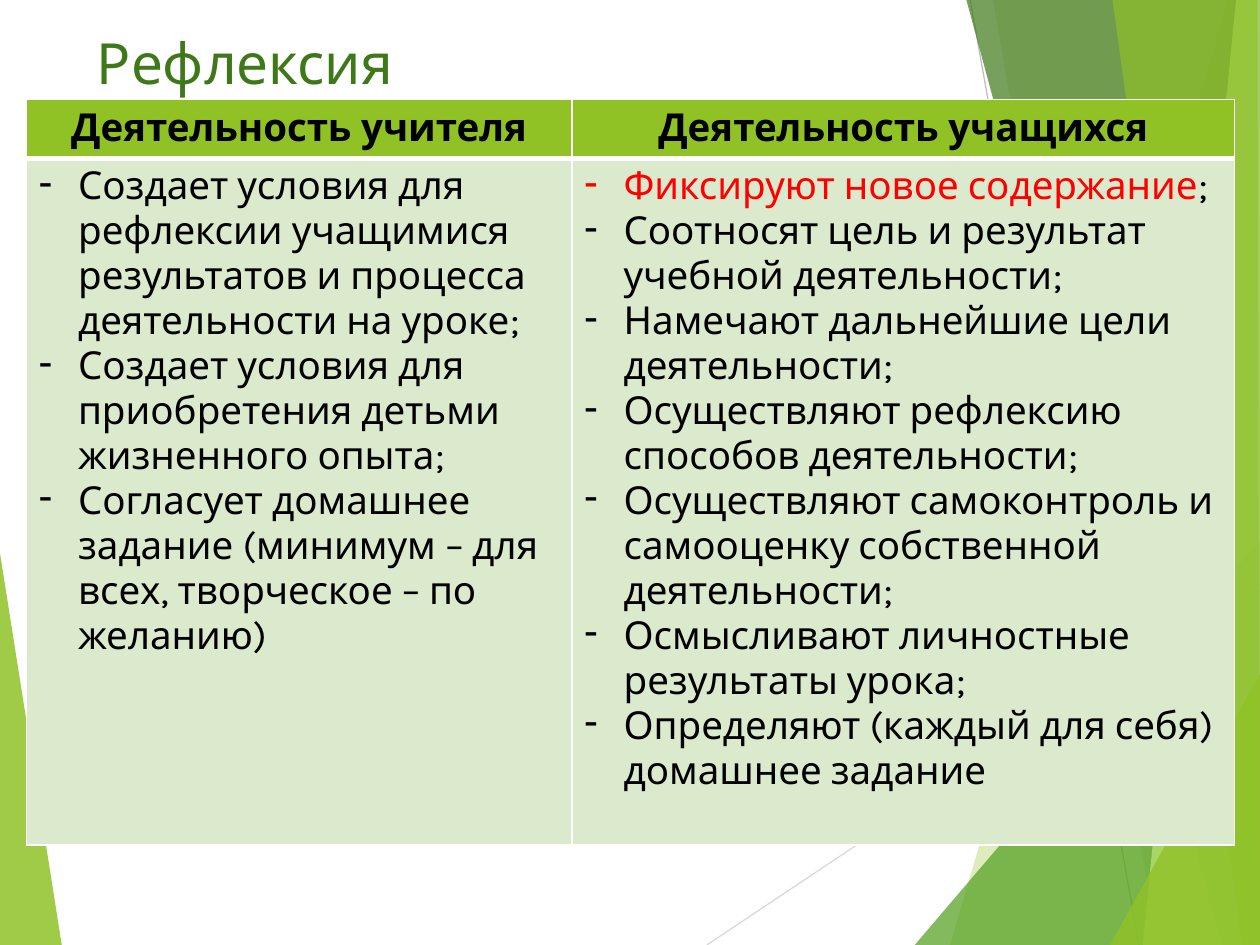
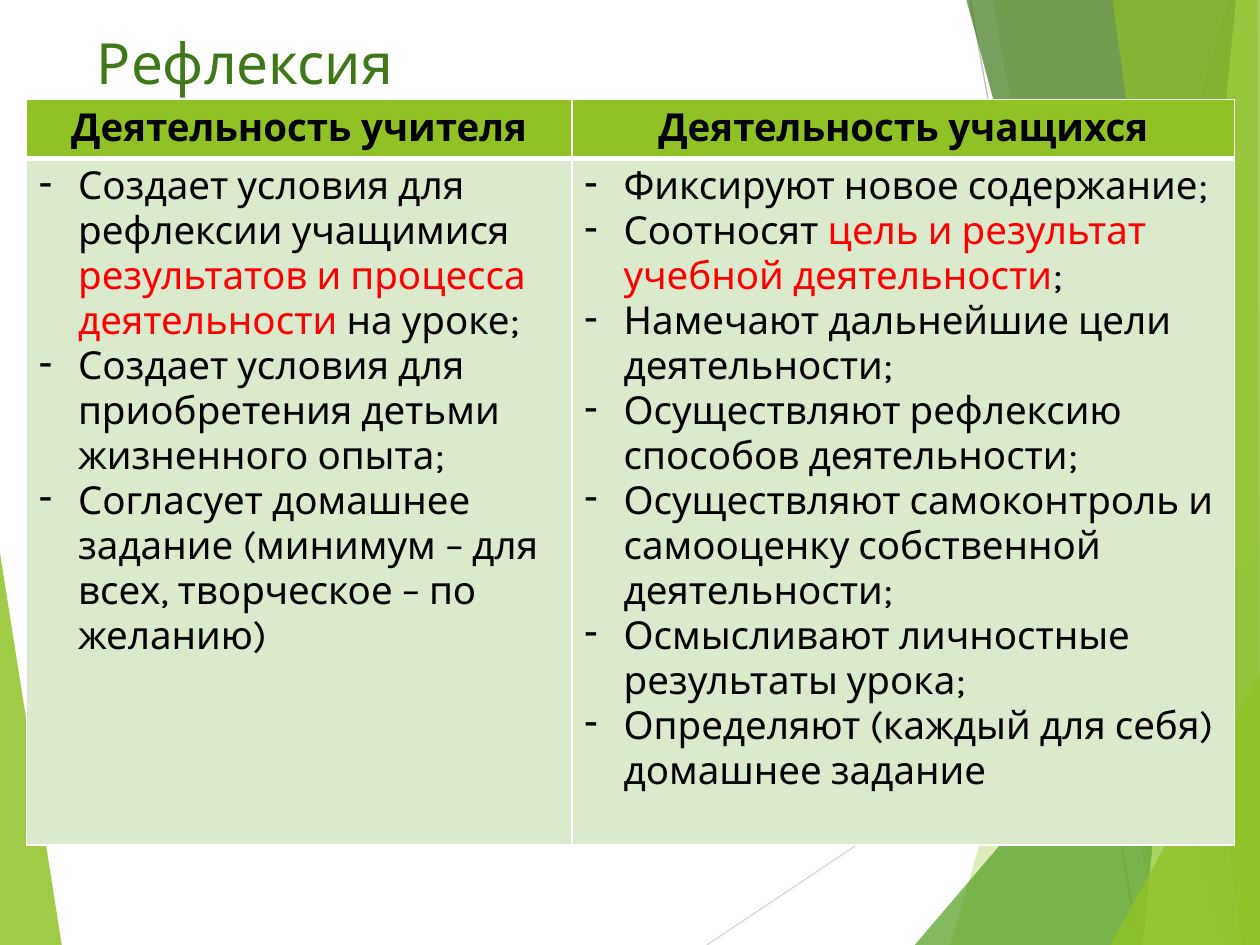
from lxml import etree
from pptx import Presentation
from pptx import util as u
from pptx.dml.color import RGBColor
from pptx.enum import shapes, text
from pptx.oxml.ns import qn

PX = 9144
WIDE, HIGH = 1000, 750
FONT = "Karla"
WHITE = RGBColor(0xFF, 0xFF, 0xFF)
BLACK = RGBColor(0, 0, 0)
RED = RGBColor(0xFF, 0, 0)
LIME = RGBColor(0x90, 0xC2, 0x26)
GREEN = RGBColor(0x54, 0xA0, 0x21)
DARK = RGBColor(0x3F, 0x78, 0x19)
PALE = RGBColor(0xC0, 0xE4, 0x74)
MINT = RGBColor(0xDB, 0xE9, 0xCD)
SILVER = RGBColor(0xD9, 0xD9, 0xD9)
GREY = RGBColor(0xBF, 0xBF, 0xBF)

LEAF = (LIME, 85, [(0, 439), (49, HIGH), (0, HIGH)])
RAYS = [
    (SILVER, (561, HIGH, WIDE, 457)),
    (GREY, (770, 0, 904, HIGH)),
]
BANDS = [
    (LIME, 30, [(975, 0), (754, HIGH), (WIDE, HIGH), (WIDE, 0)]),
    (LIME, 20, [(788, 0), (919, HIGH), (WIDE, HIGH), (WIDE, 0)]),
    (GREEN, 72, [(726, HIGH), (WIDE, 429), (WIDE, HIGH)]),
    (DARK, 70, [(767, 0), (970, HIGH), (WIDE, HIGH), (WIDE, 0)]),
    (PALE, 70, [(981, 0), (907, HIGH), (WIDE, HIGH), (WIDE, 0)]),
    (LIME, 65, [(883, 0), (986, HIGH), (WIDE, HIGH), (998, 0)]),
    (LIME, 80, [(881, HIGH), (WIDE, 535), (WIDE, HIGH)]),
]

TITLE = "Рефлексия"
HEADS = ["Деятельность учителя", "Деятельность учащихся"]
TEACHER = [
    "Создает условия для рефлексии учащимися результатов и процесса деятельности на уроке;",
    "Создает условия для приобретения детьми жизненного опыта;",
    "Согласует домашнее задание (минимум – для всех, творческое – по желанию)",
]
PUPILS = [
    "Фиксируют новое содержание;",
    "Соотносят цель и результат учебной деятельности;",
    "Намечают дальнейшие цели деятельности;",
    "Осуществляют рефлексию способов деятельности;",
    "Осуществляют самоконтроль и самооценку собственной деятельности;",
    "Осмысливают личностные результаты урока;",
    "Определяют (каждый для себя) домашнее задание",
]
MARKS = [
    ["Фиксируют новое содержание"],
    ["результатов и процесса деятельности ", "цель и результат учебной деятельности"],
]


def assign(item, **values):
    for name, value in values.items():
        setattr(item, name, value)


def add_band(slide, color, alpha, points):
    maker = slide.shapes.build_freeform(*points[0], scale=PX)
    maker.add_line_segments(points[1:], close=True)
    band = maker.convert_to_shape()
    band.shadow.inherit = False
    band.line.fill.background()
    band.fill.solid()
    band.fill.fore_color.rgb = color
    tint = band.fill._xPr.find(".//" + qn("a:srgbClr"))
    etree.SubElement(tint, qn("a:alpha"), val=str(alpha * 1000))


def add_ray(slide, color, ends):
    ray = slide.shapes.add_connector(
        shapes.MSO_CONNECTOR.STRAIGHT, *[end * PX for end in ends])
    ray.line.color.rgb = color
    ray.line.width = u.Pt(0.75)
    etree.SubElement(ray._element.spPr, qn("a:effectLst"))


def add_run(para, words, size, color, bold=False):
    run = para.add_run()
    run.text = words
    assign(run.font, name=FONT, size=u.Pt(size), bold=bold)
    run.font.color.rgb = color


def add_title(slide):
    box = slide.shapes.add_textbox(67 * PX, 19 * PX, 694 * PX, 60 * PX)
    assign(box.text_frame, word_wrap=True, vertical_anchor=text.MSO_ANCHOR.MIDDLE)
    add_run(box.text_frame.paragraphs[0], TITLE, 32.4, DARK)


def edge_cell(cell, base):
    props = cell._tc.get_or_add_tcPr()
    widths = {"a:lnL": 1, "a:lnR": 1, "a:lnT": 1, "a:lnB": base}
    for spot, (tag, width) in enumerate(widths.items()):
        line = etree.Element(qn(tag), w=str(u.Pt(width)))
        fill = etree.SubElement(line, qn("a:solidFill"))
        etree.SubElement(fill, qn("a:srgbClr"), val=str(WHITE))
        props.insert(spot, line)


def paint_cell(cell, color, base):
    cell.fill.solid()
    cell.fill.fore_color.rgb = color
    edge_cell(cell, base)


def add_item(para, words, marks):
    props = para._p.get_or_add_pPr()
    indent = 31 * PX
    assign_xml = {"marL": indent, "indent": -indent}
    for name, value in assign_xml.items():
        props.set(name, str(value))
    etree.SubElement(props, qn("a:buChar"), char="-")
    mark = next((mark for mark in marks if mark in words), "")
    before, _, after = words.partition(mark) if mark else (words, "", "")
    for part, color in ((before, BLACK), (mark, RED), (after, BLACK)):
        if part:
            add_run(para, part, 22, color)


def add_grid(slide, marks):
    rows, cols = (46, 545), (433, 526)
    frame = slide.shapes.add_table(
        2, 2, 21 * PX, 79 * PX, sum(cols) * PX, sum(rows) * PX)
    grid = frame.table
    grid.horz_banding = False
    for row, size in zip(grid.rows, rows):
        row.height = size * PX
    for spot, (head, items) in enumerate(zip(HEADS, (TEACHER, PUPILS))):
        grid.columns[spot].width = cols[spot] * PX
        top, body = grid.cell(0, spot), grid.cell(1, spot)
        paint_cell(top, LIME, 3)
        paint_cell(body, MINT, 1)
        para = top.text_frame.paragraphs[0]
        para.alignment = text.PP_ALIGN.CENTER
        add_run(para, head, 22, BLACK, True)
        for turn, words in enumerate(items):
            frame = body.text_frame
            para = frame.add_paragraph() if turn else frame.paragraphs[0]
            add_item(para, words, marks)


def add_decor(slide):
    add_band(slide, *LEAF)
    for ray in RAYS:
        add_ray(slide, *ray)
    for band in BANDS:
        add_band(slide, *band)


def main():
    deck = Presentation()
    assign(deck, slide_width=WIDE * PX, slide_height=HIGH * PX)
    for marks in MARKS:
        slide = deck.slides.add_slide(deck.slide_layouts[6])
        add_decor(slide)
        add_title(slide)
        add_grid(slide, marks)
    deck.save("out.pptx")


if __name__ == "__main__":
    main()
